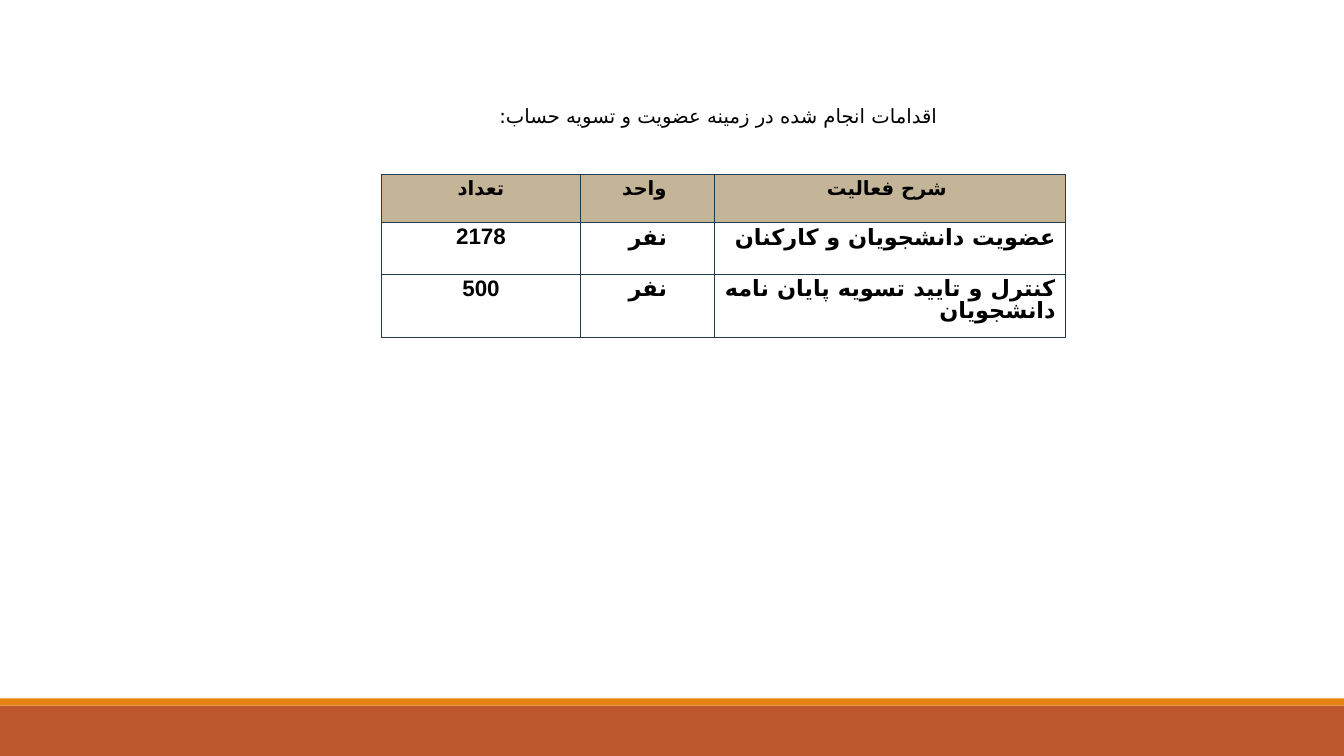
from lxml.etree import SubElement
from pptx import Presentation
from pptx.dml.color import RGBColor
from pptx.enum.shapes import MSO_SHAPE
from pptx.enum.text import MSO_ANCHOR, MSO_AUTO_SIZE, PP_ALIGN
from pptx.oxml.ns import qn
from pptx.util import Inches, Pt

HEADING = "اقدامات انجام شده در زمینه عضویت و تسویه حساب:"
ROWS = [
    ("تعداد", "واحد ", "شرح فعالیت "),
    ("2178", "نفر", "عضویت دانشجویان و کارکنان "),
    ("500", "نفر", "کنترل و تایید تسویه پایان نامه دانشجویان "),
]
COLUMN_WIDTHS = (1.98, 1.33, 3.48)
ROW_HEIGHTS = (0.48, 0.51, 0.63)

BLACK = RGBColor(0x00, 0x00, 0x00)
TAN = RGBColor(0xC5, 0xB5, 0x98)
NAVY = RGBColor(0x20, 0x3A, 0x4E)
RUST = RGBColor(0xBD, 0x58, 0x2C)
ORANGE = RGBColor(0xE4, 0x83, 0x12)
FOOTER_BANDS = [(7, 0.5, RUST), (6.93, 0.07, ORANGE)]


def format_paragraph(paragraph, size, alignment, line_spacing, bold=False, right_to_left=True):
    paragraph.alignment = alignment
    paragraph.line_spacing = line_spacing
    paragraph.space_before = Pt(0)
    paragraph.space_after = Pt(8)
    if right_to_left:
        paragraph._p.get_or_add_pPr().set("rtl", "1")
    for run in paragraph.runs:
        run.font.size = Pt(size)
        run.font.bold = bold
        run.font.name = "Calibri"
        run.font.color.rgb = BLACK
        script_font = "Arial" if run.text.isdigit() else "DejaVu Sans"
        SubElement(run.font._element, qn("a:cs"), typeface=script_font)


def add_borders(cell):
    properties = cell._tc.get_or_add_tcPr()
    for position, side in enumerate(("lnL", "lnR", "lnT", "lnB")):
        line = properties.makeelement(qn(f"a:{side}"), {"w": str(Pt(1))})
        fill = SubElement(line, qn("a:solidFill"))
        SubElement(fill, qn("a:srgbClr"), val=str(NAVY))
        properties.insert(position, line)


def add_footer(slide, width):
    for top, height, color in FOOTER_BANDS:
        band = slide.shapes.add_shape(
            MSO_SHAPE.RECTANGLE, 0, Inches(top), width, Inches(height))
        band.shadow.inherit = False
        band.fill.solid()
        band.fill.fore_color.rgb = color
        band.line.fill.background()


def add_heading(slide):
    title = slide.shapes.title
    title.left, title.top = Inches(2.74), Inches(0.96)
    title.width, title.height = Inches(6.66), Inches(0.35)
    frame = title.text_frame
    frame.text = HEADING
    frame.word_wrap = True
    frame.auto_size = MSO_AUTO_SIZE.NONE
    frame.vertical_anchor = MSO_ANCHOR.TOP
    format_paragraph(frame.paragraphs[0], 14, PP_ALIGN.RIGHT, 1.07)


def add_activity_table(slide):
    table = slide.shapes.add_table(
        len(ROWS), len(COLUMN_WIDTHS), Inches(3.78), Inches(1.73),
        Inches(sum(COLUMN_WIDTHS)), Inches(sum(ROW_HEIGHTS))).table
    table.first_row = False
    table.horz_banding = False
    for column, width in zip(table.columns, COLUMN_WIDTHS):
        column.width = Inches(width)
    for row, height in zip(table.rows, ROW_HEIGHTS):
        row.height = Inches(height)
    for row_index, texts in enumerate(ROWS):
        is_header = row_index == 0
        for column_index, text in enumerate(texts):
            cell = table.cell(row_index, column_index)
            cell.text_frame.text = text
            if is_header:
                cell.fill.solid()
                cell.fill.fore_color.rgb = TAN
            else:
                cell.fill.background()
            is_description = column_index == 2 and not is_header
            format_paragraph(
                cell.text_frame.paragraphs[0],
                14 if is_header else 16,
                PP_ALIGN.JUSTIFY if is_description else PP_ALIGN.CENTER,
                0.85, bold=True, right_to_left=not is_header)
            add_borders(cell)


def main():
    presentation = Presentation()
    presentation.slide_width = Inches(13.33)
    presentation.slide_height = Inches(7.5)
    slide = presentation.slides.add_slide(presentation.slide_layouts[5])
    add_footer(slide, presentation.slide_width)
    add_heading(slide)
    add_activity_table(slide)
    presentation.save("out.pptx")


if __name__ == "__main__":
    main()
